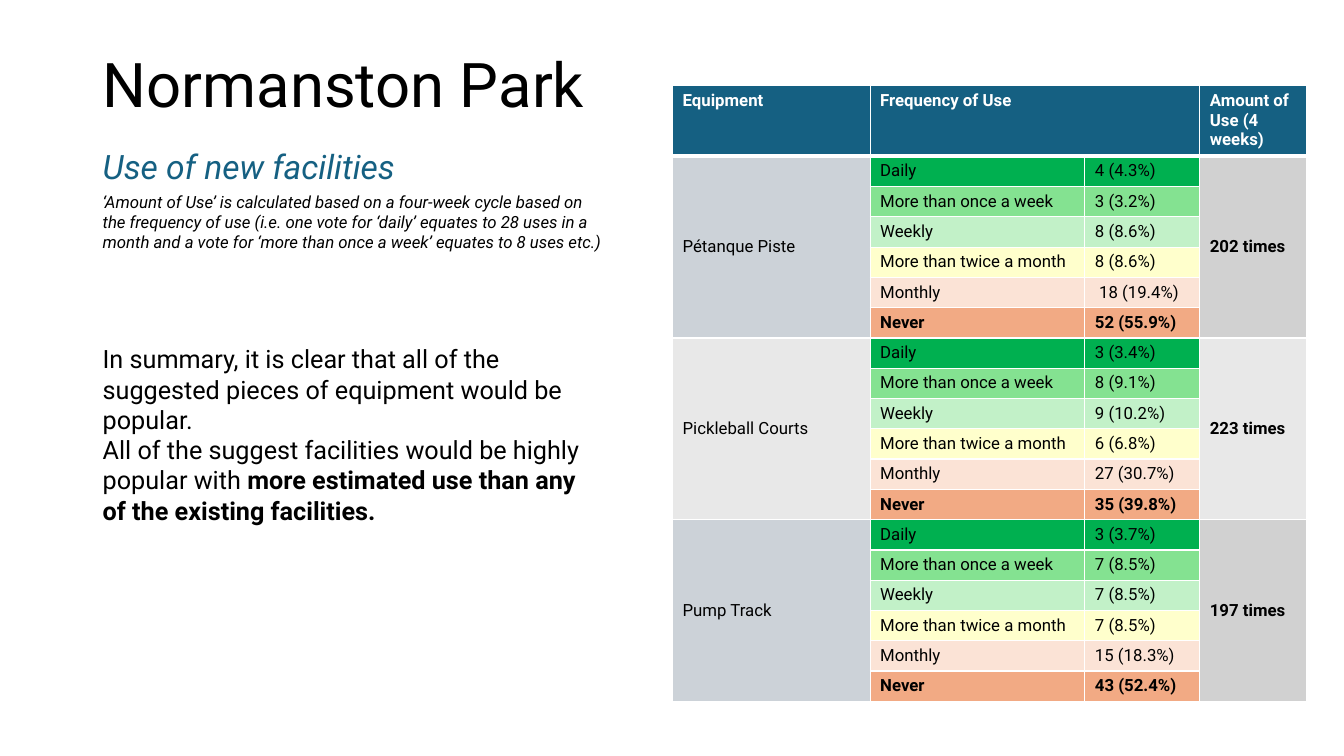
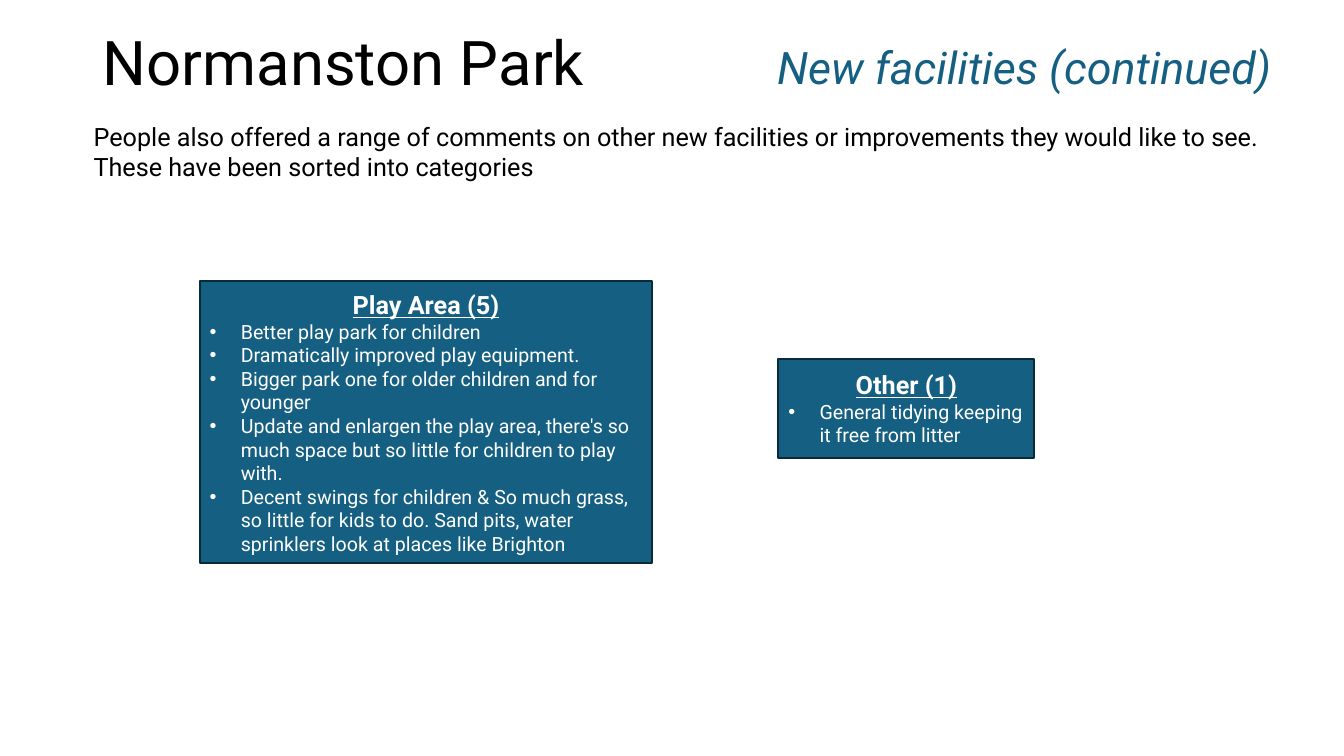
from dataclasses import dataclass

from lxml.etree import SubElement
from pptx import Presentation
from pptx.dml.color import RGBColor
from pptx.enum.shapes import MSO_SHAPE
from pptx.enum.text import MSO_ANCHOR, MSO_AUTO_SIZE, PP_ALIGN
from pptx.oxml.ns import qn
from pptx.util import Inches, Pt


@dataclass(frozen=True)
class Theme:
    font: str = "Roboto"
    black: str = "000000"
    white: str = "FFFFFF"
    accent: str = "156082"
    accent_dark: str = "092A39"
    title: int = 44
    heading: int = 32
    subtitle: int = 24
    body: int = 18
    bullet: int = 14
    small: int = 12


THEME = Theme()
SLIDE_SIZE = (13.33, 7.5)
MARGIN = 0.92
TITLE_SIZE = (11.5, 1.45)
BULLET_INDENT = 0.31

# Content
PARK = "Normanston Park"
USE_NOTE = (
    "‘Amount of Use’ is calculated based on a four-week cycle based on the "
    "frequency of use (i.e. one vote for ‘daily’ equates to 28 uses in a month "
    "and a vote for ‘more than once a week’ equates to 8 uses etc.)"
)
SUMMARY = [
    [("In summary, it is clear that all of the suggested pieces of equipment "
      "would be popular.", False)],
    [("All of the suggest facilities would be highly popular with ", False),
     ("more estimated use than any of the existing facilities.", True)],
]
COMMENTS_INTRO = (
    "People also offered a range of comments on other new facilities or "
    "improvements they would like to see. These have been sorted into categories"
)
HEADERS = {0: "Equipment", 1: "Frequency of Use", 3: "Amount of Use (4 weeks)"}
FREQUENCIES = [
    ("Daily", "00B050"),
    ("More than once a week", "84E291"),
    ("Weekly", "C2F1C8"),
    ("More than twice a month", "FFFFCC"),
    ("Monthly", "FBE3D6"),
    ("Never", "F2AA84"),
]
# Equipment, its fill, votes by frequency, amount of use, its fill
EQUIPMENT = [
    ("Pétanque Piste", "CCD2D8",
     ["4 (4.3%)", "3 (3.2%)", "8 (8.6%)", "8 (8.6%)", " 18 (19.4%)", "52 (55.9%)"],
     "202 times", "D1D1D1"),
    ("Pickleball Courts", "E8E8E8",
     ["3 (3.4%)", "8 (9.1%)", "9 (10.2%)", "6 (6.8%)", "27 (30.7%)", "35 (39.8%)"],
     "223 times", "E8E8E8"),
    ("Pump Track", "CCD2D8",
     ["3 (3.7%)", "7 (8.5%)", "7 (8.5%)", "7 (8.5%)", "15 (18.3%)", "43 (52.4%)"],
     "197 times", "D1D1D1"),
]
COMMENT_BOXES = [
    ("Play Area (5)", (1.98, 2.79, 4.49, 2.8), [
        "Better play park for children",
        "Dramatically improved play equipment.",
        "Bigger park one for older children and for younger",
        "Update and enlargen the play area, there's so much space but so little "
        "for children to play with.",
        "Decent swings for children & So much grass, so little for kids to do. "
        "Sand pits, water sprinklers look at places like Brighton",
    ]),
    ("Other (1)", (7.72, 3.56, 2.54, 0.98),
     ["General tidying keeping it free from litter"]),
]
TABLE_AT = (6.67, 0.85)
COLUMN_WIDTHS = (1.96, 2.13, 1.14, 1.06)
HEADER_HEIGHT, ROW_HEIGHT = 0.7, 0.3


# Text and slide helpers
def add_run(paragraph, text, size, color=THEME.black, **style):
    run = paragraph.add_run()
    run.text = text
    run.font.name = THEME.font
    run.font.size = Pt(size)
    run.font.color.rgb = RGBColor.from_string(color)
    for attribute in ("bold", "italic", "underline"):
        setattr(run.font, attribute, style.get(attribute, False))


def add_text(slide, box, paragraphs, size, color=THEME.black, italic=False):
    frame = slide.shapes.add_textbox(*map(Inches, box)).text_frame
    frame.word_wrap = True
    for index, runs in enumerate(paragraphs):
        paragraph = frame.add_paragraph() if index else frame.paragraphs[0]
        for text, bold in runs:
            add_run(paragraph, text, size, color, bold=bold, italic=italic)


def add_titled_slide(deck, title_top):
    slide = deck.slides.add_slide(deck.slide_layouts[5])
    title = slide.shapes.title
    title.left, title.top = Inches(MARGIN), Inches(title_top)
    title.width, title.height = map(Inches, TITLE_SIZE)
    frame = title.text_frame
    frame.auto_size = MSO_AUTO_SIZE.NONE
    frame.vertical_anchor = MSO_ANCHOR.MIDDLE
    paragraph = frame.paragraphs[0]
    paragraph.alignment = PP_ALIGN.LEFT
    paragraph.line_spacing = 0.9
    add_run(paragraph, PARK, THEME.title)
    return slide


# Table helpers
def style_cell(cell, fill, top=1, bottom=1):
    properties = cell._tc.get_or_add_tcPr()
    for side, width in (("L", 1), ("R", 1), ("T", top), ("B", bottom)):
        line = SubElement(properties, qn(f"a:ln{side}"), w=str(Pt(width)))
        color = SubElement(line, qn("a:solidFill"))
        SubElement(color, qn("a:srgbClr"), val=THEME.white)
    cell.fill.solid()
    cell.fill.fore_color.rgb = RGBColor.from_string(fill)


def write_cell(cell, text, color=THEME.black, bold=False, middle=False):
    add_run(cell.text_frame.paragraphs[0], text, THEME.small, color, bold=bold)
    if middle:
        cell.vertical_anchor = MSO_ANCHOR.MIDDLE


def add_use_table(slide):
    group_size = len(FREQUENCIES)
    body_rows = group_size * len(EQUIPMENT)
    size = (sum(COLUMN_WIDTHS), HEADER_HEIGHT + ROW_HEIGHT * body_rows)
    table = slide.shapes.add_table(
        body_rows + 1, len(COLUMN_WIDTHS), *map(Inches, TABLE_AT + size)).table
    table.horz_banding = False
    for column, width in zip(table.columns, COLUMN_WIDTHS):
        column.width = Inches(width)
    for index, row in enumerate(table.rows):
        row.height = Inches(ROW_HEIGHT if index else HEADER_HEIGHT)

    # Header row
    for column in range(len(COLUMN_WIDTHS)):
        style_cell(table.cell(0, column), THEME.accent, bottom=3)
    for column, text in HEADERS.items():
        write_cell(table.cell(0, column), text, THEME.white, bold=True)
    table.cell(0, 1).merge(table.cell(0, 2))

    # One group of rows for each piece of equipment
    for group, (name, name_fill, votes, amount, amount_fill) in enumerate(EQUIPMENT):
        first = 1 + group * group_size
        for offset, ((frequency, fill), vote) in enumerate(zip(FREQUENCIES, votes)):
            row = first + offset
            for column, cell_fill in enumerate((name_fill, fill, fill, amount_fill)):
                style_cell(table.cell(row, column), cell_fill, top=3 if row == 1 else 1)
            bold = frequency == "Never"
            write_cell(table.cell(row, 1), frequency, bold=bold)
            write_cell(table.cell(row, 2), vote, bold=bold)
        write_cell(table.cell(first, 0), name, middle=True)
        write_cell(table.cell(first, 3), amount, bold=True, middle=True)
        for column in (0, 3):
            table.cell(first, column).merge(table.cell(first + group_size - 1, column))


# Comment box
def add_comment_box(slide, heading, box, comments):
    panel = slide.shapes.add_shape(MSO_SHAPE.RECTANGLE, *map(Inches, box))
    panel.shadow.inherit = False
    panel.fill.solid()
    panel.fill.fore_color.rgb = RGBColor.from_string(THEME.accent)
    panel.line.color.rgb = RGBColor.from_string(THEME.accent_dark)
    panel.line.width = Pt(1.5)
    frame = panel.text_frame
    frame.word_wrap = True
    frame.vertical_anchor = MSO_ANCHOR.MIDDLE
    frame.paragraphs[0].alignment = PP_ALIGN.CENTER
    add_run(frame.paragraphs[0], heading, THEME.body, THEME.white,
            bold=True, underline=True)
    for comment in comments:
        paragraph = frame.add_paragraph()
        paragraph.alignment = PP_ALIGN.LEFT
        properties = paragraph._p.get_or_add_pPr()
        properties.set("marL", str(Inches(BULLET_INDENT)))
        properties.set("indent", str(-Inches(BULLET_INDENT)))
        SubElement(properties, qn("a:buFont"), typeface="Arial")
        SubElement(properties, qn("a:buChar"), char="•")
        add_run(paragraph, comment, THEME.bullet, THEME.white)


def main():
    deck = Presentation()
    deck.slide_width, deck.slide_height = map(Inches, SLIDE_SIZE)

    # Use of new facilities
    use = add_titled_slide(deck, 0.14)
    add_text(use, (MARGIN, 1.4, 5.48, 0.5), [[("Use of new facilities", False)]],
             THEME.subtitle, THEME.accent, italic=True)
    add_text(use, (MARGIN, 1.85, 5.22, 0.71), [[(USE_NOTE, False)]],
             THEME.small, italic=True)
    add_use_table(use)
    add_text(use, (MARGIN, 3.36, 4.94, 1.92), SUMMARY, THEME.body)

    # Comments on new facilities
    comments = add_titled_slide(deck, -0.07)
    add_text(comments, (7.61, 0.34, 5.48, 0.64),
             [[("New facilities (continued)", False)]],
             THEME.heading, THEME.accent, italic=True)
    add_text(comments, (0.83, 1.15, 12.04, 0.71), [[(COMMENTS_INTRO, False)]],
             THEME.body)
    for heading, box, remarks in COMMENT_BOXES:
        add_comment_box(comments, heading, box, remarks)

    deck.save("out.pptx")


if __name__ == "__main__":
    main()
